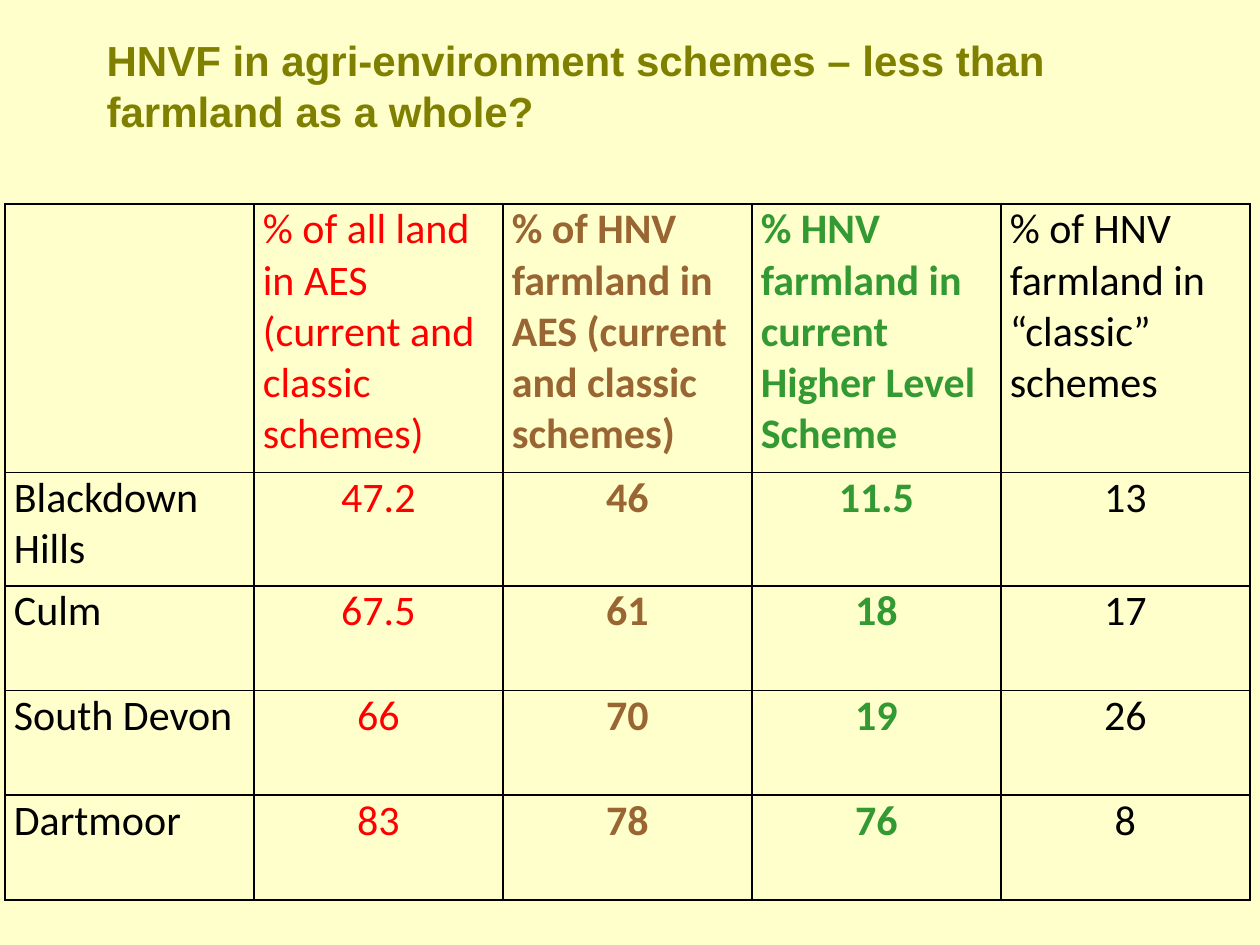
import lxml.etree
import pptx
import pptx.dml.color
import pptx.enum.text
import pptx.oxml.ns
import pptx.util

Cm = pptx.util.Cm
Pt = pptx.util.Pt
ALIGN = pptx.enum.text.PP_ALIGN
ANCHOR = pptx.enum.text.MSO_ANCHOR

TITLE = "HNVF in agri-environment schemes – less than farmland as a whole?"
TITLE_FORMAT = {"name": "Arial", "size": Pt(24), "bold": True}
ROWS = [
    ["", "% of all land in AES (current and classic schemes)",
     "% of HNV farmland in AES (current and classic schemes)",
     "% HNV farmland in current Higher Level Scheme",
     "% of HNV farmland in “classic” schemes"],
    ["Blackdown Hills", "47.2", "46", "11.5", "13"],
    ["Culm", "67.5", "61", "18", "17"],
    ["South Devon", "66", "70", "19", "26"],
    ["Dartmoor", "83", "78", "76", "8"],
]
COLUMN_STYLES = [("000000", False), ("FF0000", False), ("996633", True),
                 ("339933", True), ("000000", False)]
COLUMN_WIDTH = Cm(5.02)
ROW_HEIGHTS = [Cm(5.41), Cm(2.29), Cm(2.11), Cm(2.11), Cm(2.11)]
CELL_FORMAT = {"margin_left": Cm(0.18), "margin_right": Cm(0.18),
               "margin_top": 0, "margin_bottom": 0}


def color(value):
    return pptx.dml.color.RGBColor.from_string(value)


def apply_format(target, values):
    for name, value in values.items():
        setattr(target, name, value)


def write_text(para, text, font_values, text_color):
    span = para.add_run()
    span.text = text
    apply_format(span.font, font_values)
    span.font.color.rgb = color(text_color)


def add_title(page):
    box = page.shapes.add_textbox(Cm(1.9), Cm(0.13), Cm(21.6), Cm(3.18))
    apply_format(box.text_frame, {"word_wrap": True,
                                  "vertical_anchor": ANCHOR.MIDDLE})
    write_text(box.text_frame.paragraphs[0], TITLE, TITLE_FORMAT, "808000")


def add_borders(cell, line_color, width):
    properties = cell._tc.get_or_add_tcPr()
    qn = pptx.oxml.ns.qn
    for side in ("lnL", "lnR", "lnT", "lnB"):
        line = lxml.etree.SubElement(properties, qn(f"a:{side}"), w=str(width))
        fill = lxml.etree.SubElement(line, qn("a:solidFill"))
        lxml.etree.SubElement(fill, qn("a:srgbClr"), val=line_color)


def fill_cell(cell, text, style, alignment):
    text_color, bold = style
    apply_format(cell, CELL_FORMAT)
    add_borders(cell, "000000", Pt(1))
    cell.fill.background()
    para = cell.text_frame.paragraphs[0]
    para.alignment = alignment
    if text:
        font_values = {"name": "Calibri", "size": Pt(24), "bold": bold}
        write_text(para, text, font_values, text_color)


def add_scheme_table(page):
    count = len(COLUMN_STYLES)
    frame = page.shapes.add_table(len(ROWS), count, Cm(0.1), Cm(4.11),
                                  COLUMN_WIDTH * count, sum(ROW_HEIGHTS))
    table = frame.table
    apply_format(table, {"first_row": False, "horz_banding": False})
    for column in table.columns:
        column.width = COLUMN_WIDTH
    for row_index, texts in enumerate(ROWS):
        table.rows[row_index].height = ROW_HEIGHTS[row_index]
        for column_index, text in enumerate(texts):
            is_value = row_index > 0 and column_index > 0
            fill_cell(table.cell(row_index, column_index), text,
                      COLUMN_STYLES[column_index],
                      ALIGN.CENTER if is_value else ALIGN.LEFT)


def main():
    deck = pptx.Presentation()
    apply_format(deck, {"slide_width": Cm(25.4), "slide_height": Cm(19.05)})
    page = deck.slides.add_slide(deck.slide_layouts[6])
    page.background.fill.solid()
    page.background.fill.fore_color.rgb = color("FFFFCC")
    add_title(page)
    add_scheme_table(page)
    deck.save("out.pptx")


if __name__ == "__main__":
    main()
